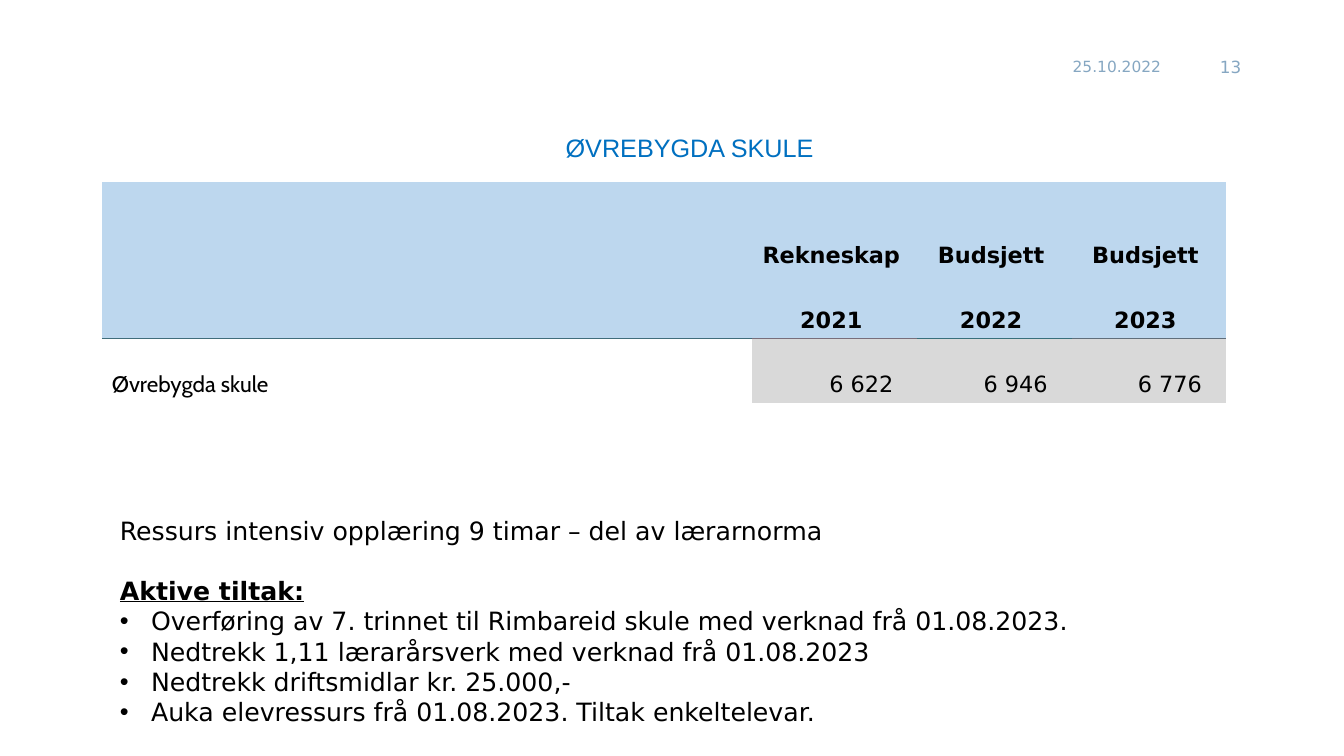
from pptx import Presentation
from pptx.dml.color import RGBColor
from pptx.enum.text import MSO_ANCHOR, PP_ALIGN
from pptx.oxml import parse_xml
from pptx.oxml.ns import nsdecls, qn
from pptx.util import Inches, Pt

COLORS = {
    "title": "0070C0",
    "muted": "86A7C2",
    "text": "000000",
    "header": "BDD7EE",
    "amount": "D9D9D9",
}
RULE_COLORS = ["406D7B", "786E7B", "386F7B", "606E7B"]
BODY_FONT = "DejaVu Sans"
NO_GRID_STYLE = "{2D5ABB26-0587-4C30-8999-92F81FD0307C}"

COLUMN_WIDTHS = [6.45, 1.64, 1.53, 1.53]
ROW_HEIGHTS = [0.91, 0.64, 0.64]
BUDGET_ROWS = [
    ["", "Rekneskap", "Budsjett", "Budsjett"],
    ["", "2021", "2022", "2023"],
    ["Øvrebygda skule", "6 622", "6 946", "6 776"],
]
MEASURES = [
    "Overføring av 7. trinnet til Rimbareid skule med verknad frå 01.08.2023.",
    "Nedtrekk 1,11 lærarårsverk med verknad frå 01.08.2023",
    "Nedtrekk driftsmidlar kr. 25.000,-",
    "Auka elevressurs frå 01.08.2023. Tiltak enkeltelevar.",
]


class SlideBuilder:
    def __init__(self, deck):
        self.page = deck.slides.add_slide(deck.slide_layouts[5])

    def style(self, paragraph, size, color="text", font=BODY_FONT, bold=False, underline=False):
        for span in paragraph.runs:
            span.font.size = Pt(size)
            span.font.name = font
            span.font.bold = bold
            span.font.underline = underline
            span.font.color.rgb = RGBColor.from_string(COLORS[color])

    def title(self, text, left, top, width, height):
        box = self.page.shapes.title
        box.left, box.top, box.width, box.height = map(Inches, (left, top, width, height))
        frame = box.text_frame
        frame.text = text
        frame.vertical_anchor = MSO_ANCHOR.TOP
        frame.paragraphs[0].alignment = PP_ALIGN.CENTER
        self.style(frame.paragraphs[0], 18, "title", "Arial")

    def text_box(self, text, left, top, width, height):
        box = self.page.shapes.add_textbox(*map(Inches, (left, top, width, height)))
        box.text_frame.word_wrap = True
        box.text_frame.text = text
        return box.text_frame

    def label(self, text, left, width, size, alignment):
        frame = self.text_box(text, left, 0.46, width, 0.4)
        frame.vertical_anchor = MSO_ANCHOR.MIDDLE
        frame.paragraphs[0].alignment = alignment
        self.style(frame.paragraphs[0], size, "muted")

    def bullet(self, paragraph):
        properties = paragraph._p.get_or_add_pPr()
        properties.set("marL", str(Inches(0.31)))
        properties.set("indent", str(-Inches(0.31)))
        properties.append(parse_xml(f'<a:buFont {nsdecls("a")} typeface="Arial"/>'))
        properties.append(parse_xml(f'<a:buChar {nsdecls("a")} char="•"/>'))

    def measures(self, left, top, width, height):
        lines = ["Ressurs intensiv opplæring 9 timar – del av lærarnorma", "Aktive tiltak:", *MEASURES]
        frame = self.text_box("\n".join(lines), left, top, width, height)
        for index, paragraph in enumerate(frame.paragraphs):
            heading = index == 1
            paragraph.line_spacing = Pt(21.6)
            if heading:
                paragraph.space_before = Pt(21.6)
            if index > 1:
                self.bullet(paragraph)
            self.style(paragraph, 18, bold=heading, underline=heading)

    def border(self, cell, side, color):
        """Draw a thin rule on one side of a cell; side is "T" or "B"."""
        line = parse_xml(
            f'<a:ln{side} {nsdecls("a")} w="{Pt(0.75)}"><a:solidFill>'
            f'<a:srgbClr val="{color}"/></a:solidFill></a:ln{side}>'
        )
        cell._tc.get_or_add_tcPr().insert(0, line)

    def cell(self, cell, text, row, column):
        header, amount = row < 2, row == 2 and column > 0
        if header or amount:
            cell.fill.solid()
            cell.fill.fore_color.rgb = RGBColor.from_string(COLORS["header" if header else "amount"])
        else:
            cell.fill.background()
        if row:
            self.border(cell, "B" if header else "T", RULE_COLORS[column])
        cell.vertical_anchor = MSO_ANCHOR.BOTTOM
        cell.text = text
        paragraph = cell.text_frame.paragraphs[0]
        if header:
            cell.margin_left, cell.margin_right = Inches(0.05), Inches(0.12)
            paragraph.alignment = PP_ALIGN.CENTER
        elif amount:
            cell.margin_right = Inches(0.24)
            paragraph.alignment = PP_ALIGN.RIGHT
        self.style(paragraph, 16, font=BODY_FONT if header or amount else "Cabin", bold=header)

    def budget_table(self, left, top):
        size = sum(COLUMN_WIDTHS), sum(ROW_HEIGHTS)
        shape = self.page.shapes.add_table(
            len(ROW_HEIGHTS), len(COLUMN_WIDTHS), *map(Inches, (left, top, *size))
        )
        table = shape.table
        table.horz_banding = False
        next(shape.element.iter(qn("a:tableStyleId"))).text = NO_GRID_STYLE
        for column, width in zip(table.columns, COLUMN_WIDTHS):
            column.width = Inches(width)
        for row, height in zip(table.rows, ROW_HEIGHTS):
            row.height = Inches(height)
        for row, texts in enumerate(BUDGET_ROWS):
            for column, text in enumerate(texts):
                self.cell(table.cell(row, column), text, row, column)


def main():
    deck = Presentation()
    deck.slide_width, deck.slide_height = Inches(13.33), Inches(7.5)
    slide = SlideBuilder(deck)
    slide.label("25.10.2022", 10.54, 1.15, 11, PP_ALIGN.LEFT)
    slide.label("13", 11.84, 0.57, 12, PP_ALIGN.RIGHT)
    slide.title("ØVREBYGDA SKULE", 1.26, 1.26, 11.16, 1.92)
    slide.budget_table(1.01, 1.81)
    slide.measures(1.09, 5.06, 11.16, 2.52)
    deck.save("out.pptx")


if __name__ == "__main__":
    main()
